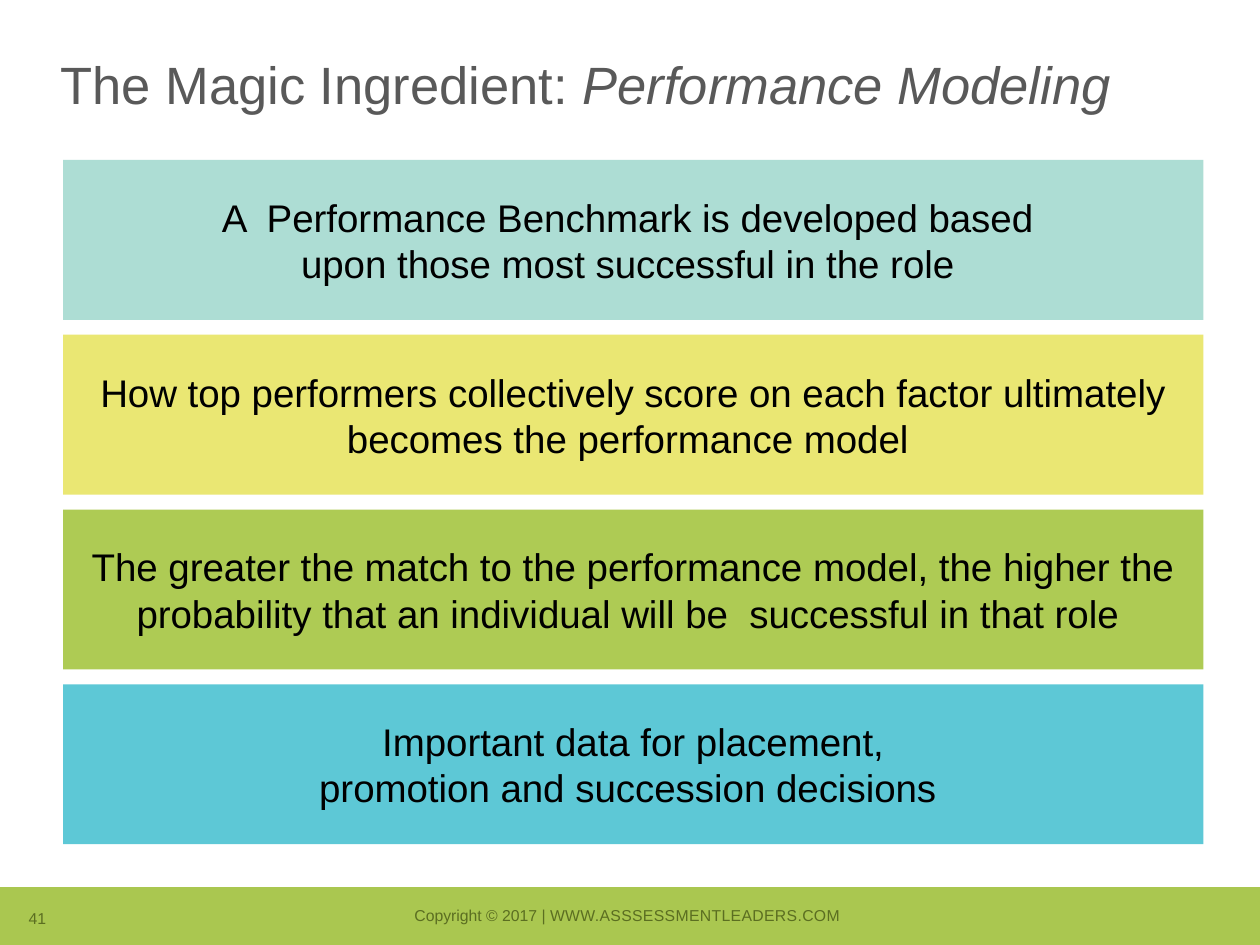
from pptx import Presentation
from pptx.dml.color import RGBColor
from pptx.enum.shapes import MSO_SHAPE as Shape
from pptx.enum.text import MSO_ANCHOR as Anchor, PP_ALIGN as Align
from pptx.util import Inches, Pt

WIDE, HIGH = 10, 7.5
LEFT, TOP, SPAN, TALL, STEP = 0.5, 1.27, 9.05, 1.27, 1.387
BANDS = [
    ("ADDDD4", "A  Performance Benchmark is developed based \n"
               "upon those most successful in the role "),
    ("EAE773", "How top performers collectively score on each factor "
               "ultimately becomes the performance model "),
    ("AECB54", "The greater the match to the performance model, the higher "
               "the probability that an individual will be  successful in "
               "that role "),
    ("5DC8D6", "Important data for placement,\n"
               "promotion and succession decisions "),
]


def tint(code):
    """Turn a hex string into a colour."""
    return RGBColor.from_string(code)


def write(frame, *parts, size=22, color="000000", align=Align.LEFT,
          anchor=Anchor.MIDDLE, wrap=True, slant=(), track=None, lead=None):
    """Fill a text frame with runs; slant and track pick runs by index."""
    frame.word_wrap = wrap
    frame.vertical_anchor = anchor
    para = frame.paragraphs[0]
    para.alignment = align
    if lead:
        para.line_spacing = lead
    for num, part in enumerate(parts):
        for row, line in enumerate(part.split("\n")):
            if row:
                para.add_line_break()
            run = para.add_run()
            run.text = line
            font = run.font
            font.name, font.size = "Arial", Pt(size)
            font.color.rgb = tint(color)
            if num in slant:
                font.italic = True
            if track and num in track:
                run._r.get_or_add_rPr().set("spc", str(track[num]))


class Deck:
    """Holds the style and the current slide."""

    ink, green, moss = "595959", "AAC750", "5B6E21"

    def __init__(self):
        """Open a deck with one title slide."""
        self.file = Presentation()
        self.file.slide_width = Inches(WIDE)
        self.file.slide_height = Inches(HIGH)
        self.slide = self.file.slides.add_slide(self.file.slide_layouts[5])

    def title(self, box, *parts, **form):
        """Move and fill the title placeholder."""
        head = self.slide.shapes.title
        head.left, head.top, head.width, head.height = map(Inches, box)
        write(head.text_frame, *parts, color=self.ink, **form)

    def block(self, box, fill):
        """Add a plain filled rectangle."""
        rect = self.slide.shapes.add_shape(Shape.RECTANGLE, *map(Inches, box))
        rect.shadow.inherit = False
        rect.fill.solid()
        rect.fill.fore_color.rgb = tint(fill)
        rect.line.fill.background()
        return rect

    def band(self, row, fill, text):
        """Add a centred message band on a grid row."""
        rect = self.block((LEFT, TOP + row * STEP, SPAN, TALL), fill)
        write(rect.text_frame, text, align=Align.CENTER)

    def note(self, box, *parts, **form):
        """Add a small footer text."""
        text = self.slide.shapes.add_textbox(*map(Inches, box))
        write(text.text_frame, *parts, size=9, color=self.moss,
              anchor=Anchor.BOTTOM, wrap=False, **form)


def main():
    """Build and save the slide."""
    deck = Deck()
    deck.block((0, 7.04, WIDE, 0.46), deck.green)
    deck.note((3.17, 7.14, 3.65, 0.25), "Copyright © 2017 | ",
              "WWW.ASSSESSMENTLEADERS.COM ", align=Align.CENTER,
              track={1: 20})
    deck.note((0.13, 7.16, 0.36, 0.25), "41")
    deck.title((0.38, 0.42, 9.25, 0.83), "The Magic Ingredient: ",
               "Performance Modeling", size=30, slant=(1,), lead=0.9,
               anchor=Anchor.TOP)
    for row, (fill, text) in enumerate(BANDS):
        deck.band(row, fill, text)
    deck.file.save("out.pptx")


if __name__ == "__main__":
    main()
